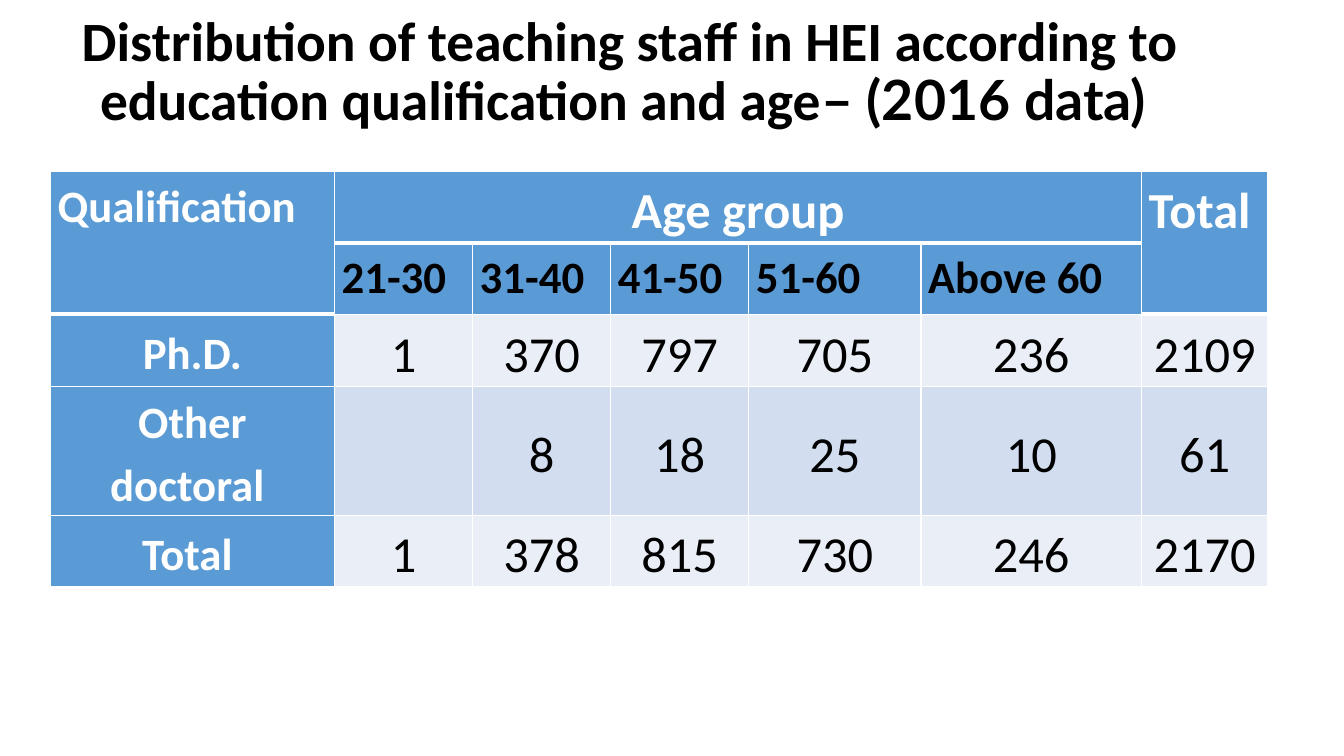
from lxml.etree import SubElement
from pptx import Presentation
from pptx.dml.color import RGBColor
from pptx.enum.text import MSO_ANCHOR as Anchor, MSO_AUTO_SIZE as AutoSize, PP_ALIGN as Align
from pptx.oxml.ns import qn
from pptx.util import Cm, Pt

BLUE = RGBColor(0x5B, 0x9B, 0xD5)
PALE = RGBColor(0xEA, 0xEF, 0xF7)
MID = RGBColor(0xD2, 0xDE, 0xEF)
WHITE = RGBColor(0xFF, 0xFF, 0xFF)
BLACK = RGBColor(0, 0, 0)

COLS = [7.16, 3.48, 3.48, 3.48, 4.34, 5.56, 3.18]
ROWS = [1.8, 1.8, 1.82, 3.24, 1.8]
DATA = [
    ["Qualification", "Age group", "", "", "", "", "Total"],
    ["", "21-30", "31-40", "41-50", "51-60", "Above 60", ""],
    ["Ph.D.", "1", "370", "797", "705", "236", "2109"],
    ["Other doctoral ", "", "8", "18", "25", "10", "61"],
    ["Total ", "1", "378", "815", "730", "246", "2170"],
]
MERGES = [((0, 0), (1, 0)), ((0, 1), (0, 5)), ((0, 6), (1, 6))]


def format_run(r, font, size, color, bold):
    r.font.name = font
    r.font.size = Pt(size)
    r.font.color.rgb = color
    r.font.bold = bold


def set_borders(cell, bottom):
    pr = cell._tc.get_or_add_tcPr()
    widths = {"lnL": 1, "lnR": 1, "lnT": 1, "lnB": bottom}
    for i, (side, width) in enumerate(widths.items()):
        ln = pr.makeelement(qn(f"a:{side}"), {"w": str(Pt(width))})
        fill = SubElement(ln, qn("a:solidFill"))
        SubElement(fill, qn("a:srgbClr"), val=str(WHITE))
        pr.insert(i, ln)


def format_cell(cell, text, row, col):
    header = row < 2
    label = header or col == 0
    cell.fill.solid()
    cell.fill.fore_color.rgb = BLUE if label else MID if row == 3 else PALE
    cell.margin_left = cell.margin_right = Cm(0.18)
    cell.margin_top = cell.margin_bottom = 0
    cell.vertical_anchor = Anchor.TOP if header else Anchor.MIDDLE
    set_borders(cell, 3 if row == 0 or (row == 1 and col in (0, 6)) else 1)
    if not text:
        return
    cell.text_frame.text = text
    p = cell.text_frame.paragraphs[0]
    p.alignment = Align.JUSTIFY if header and text != "Age group" else Align.CENTER
    p.line_spacing = 1.15
    p.space_before = p.space_after = Pt(12)
    small = col == 0 or row == 1
    white = label and row != 1
    format_run(p.runs[0], "Calibri", 32 if small else 36, WHITE if white else BLACK, label)


def add_title(s, left, top, width, height):
    sp = s.shapes.title
    sp.left, sp.top, sp.width, sp.height = left, top, width, height
    tf = sp.text_frame
    tf.word_wrap = True
    tf.auto_size = AutoSize.NONE
    tf.vertical_anchor = Anchor.MIDDLE
    p = tf.paragraphs[0]
    p.alignment = Align.CENTER
    p.line_spacing = 0.9
    for text, font in [
        ("Distribution of teaching staff in HEI according to education qualification and age", "Calibri"),
        ("– (2016 data) ", "Lato"),
    ]:
        r = p.add_run()
        r.text = text
        format_run(r, font, 39.6, BLACK, True)


def add_staff_table(s, left, top, width, height):
    table = s.shapes.add_table(len(ROWS), len(COLS), left, top, width, height).table
    table.horz_banding = False
    for column, size in zip(table.columns, COLS):
        column.width = Cm(size)
    for row, size in zip(table.rows, ROWS):
        row.height = Cm(size)
    for i, values in enumerate(DATA):
        for j, text in enumerate(values):
            format_cell(table.cell(i, j), text, i, j)
    for first, last in MERGES:
        table.cell(*first).merge(table.cell(*last))


def main():
    prs = Presentation()
    prs.slide_width, prs.slide_height = Cm(33.87), Cm(19.05)
    s = prs.slides.add_slide(prs.slide_layouts[5])
    add_title(s, Cm(1.27), 0, Cm(29.21), Cm(3.68))
    add_staff_table(s, Cm(1.27), Cm(4.32), Cm(sum(COLS)), Cm(sum(ROWS)))
    prs.save("out.pptx")


if __name__ == "__main__":
    main()
